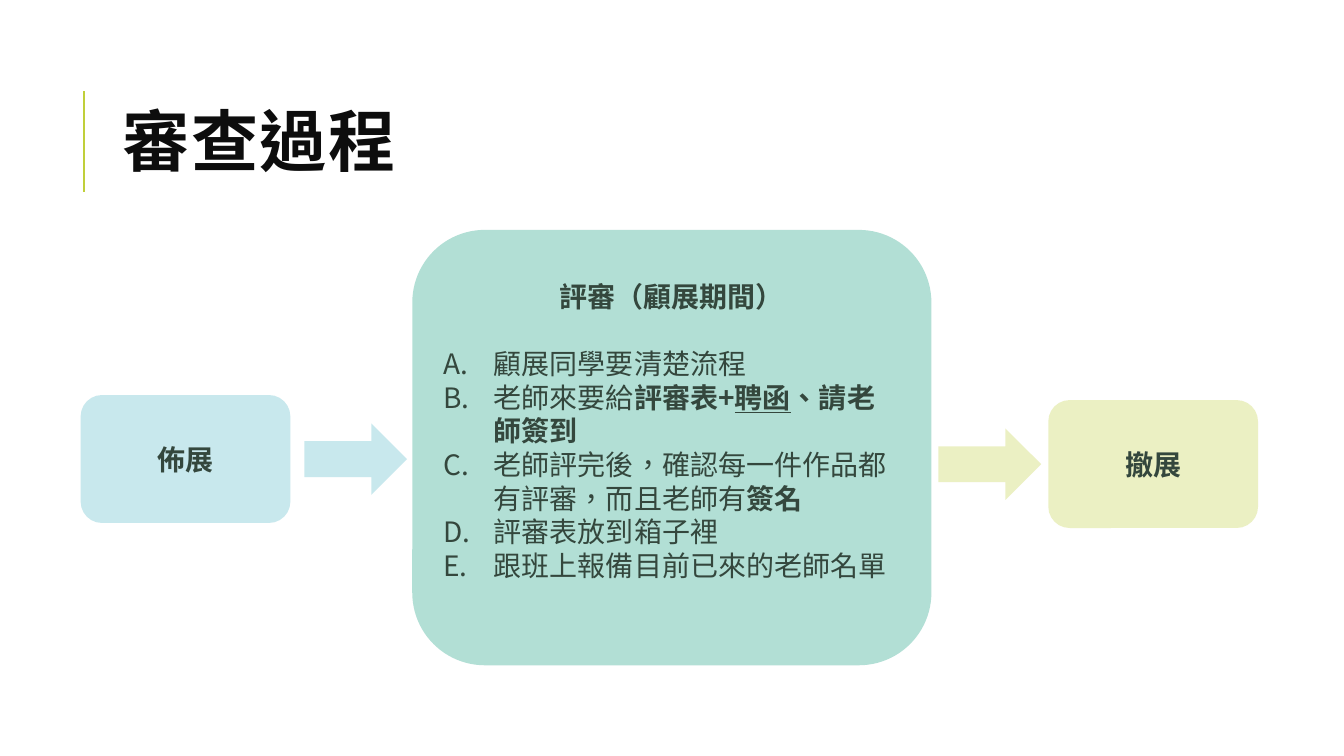
from lxml.etree import SubElement
from pptx import Presentation
from pptx.dml.color import RGBColor
from pptx.enum.shapes import MSO_CONNECTOR, MSO_SHAPE
from pptx.enum.text import MSO_ANCHOR, PP_ALIGN
from pptx.oxml.ns import qn
from pptx.util import Pt

SANS = "Noto Sans CJK SC"
INK = "34473D"
BLUE, TEAL, LIME = "4AB5C4", "029676", "C0CF3A"
SIZE = 20
LINE = 24

# Each step is a list of (text, bold, underline) runs.
STEPS = [
    [("顧展同學要清楚流程", False, False)],
    [("老師來要給", False, False), ("評審表+", True, False),
     ("聘函", True, True), ("、請老師簽到", True, False)],
    [("老師評完後，確認每一件作品都有評審，而且老師有", False, False),
     ("簽名", True, False)],
    [("評審表放到箱子裡", False, False)],
    [("跟班上報備目前已來的老師名單", False, False)],
]


def paint(color, code):
    color.rgb = RGBColor.from_string(code)


def add_run(para, text, size=SIZE, code=INK, bold=True, under=False, face=SANS):
    run = para.add_run()
    run.text = text
    font = run.font
    font.size, font.bold, font.name = Pt(size), bold, face
    if under:
        font.underline = True
    paint(font.color, code)
    props = font._element
    props.set("lang", "zh-TW")
    SubElement(props, qn("a:ea")).set("typeface", SANS)
    return run


def add_block(slide, kind, code, left, top, width, height):
    """Add a borderless shape filled at 30 % opacity."""
    block = slide.shapes.add_shape(kind, Pt(left), Pt(top), Pt(width), Pt(height))
    block.shadow.inherit = False
    block.line.fill.background()
    block.fill.solid()
    paint(block.fill.fore_color, code)
    tint = block.fill._xPr.find(".//" + qn("a:srgbClr"))
    SubElement(tint, qn("a:alpha")).set("val", "30000")
    return block


def add_card(slide, text, code, left, top, width=149.8, height=91.4):
    """Add a rounded box with a centred bold heading; return its text frame."""
    card = add_block(slide, MSO_SHAPE.ROUNDED_RECTANGLE, code,
                     left, top, width, height)
    frame = card.text_frame
    frame.word_wrap = True
    frame.vertical_anchor = MSO_ANCHOR.MIDDLE
    head = frame.paragraphs[0]
    head.alignment = PP_ALIGN.CENTER
    add_run(head, text)
    return frame


def add_arrow(slide, code, left, top):
    add_block(slide, MSO_SHAPE.RIGHT_ARROW, code, left, top, 73.4, 51.1)


def add_steps(frame, steps):
    """List the steps as A., B., C. with one line free above and below."""
    head = frame.paragraphs[0]
    head.line_spacing = Pt(LINE)
    head.space_after = Pt(LINE)
    frame.margin_bottom = Pt(3.6 + LINE)
    for step in steps:
        para = frame.add_paragraph()
        para.alignment = PP_ALIGN.LEFT
        para.line_spacing = Pt(LINE)
        props = para._p.get_or_add_pPr()
        props.set("marL", str(Pt(36)))
        props.set("indent", str(-Pt(36)))
        SubElement(props, qn("a:buFont")).set("typeface", SANS)
        SubElement(props, qn("a:buAutoNum")).set("type", "alphaUcPeriod")
        for text, bold, under in step:
            add_run(para, text, bold=bold, under=under)


def add_title(slide, text):
    box = slide.shapes.add_textbox(Pt(80.6), Pt(46.1), Pt(765.4), Pt(118.1))
    frame = box.text_frame
    frame.word_wrap = True
    frame.vertical_anchor = MSO_ANCHOR.MIDDLE
    para = frame.paragraphs[0]
    para.line_spacing = 0.8
    run = add_run(para, text, size=48, code="0D0D0D", face="Cabin")
    run.font._element.set("spc", "100")


def add_rule(slide, code, left, top, bottom):
    rule = slide.shapes.add_connector(MSO_CONNECTOR.STRAIGHT,
                                      Pt(left), Pt(bottom), Pt(left), Pt(top))
    paint(rule.line.color, code)
    rule.line.width = Pt(1.5)
    SubElement(rule._element.spPr, qn("a:effectLst"))


def main():
    deck = Presentation()
    deck.slide_width, deck.slide_height = Pt(960), Pt(540)
    slide = deck.slides.add_slide(deck.slide_layouts[6])

    add_rule(slide, LIME, 60, 65, 137)
    add_title(slide, "審查過程")
    add_card(slide, "佈展", BLUE, 57.6, 282.2)
    review = add_card(slide, "評審（顧展期間）", TEAL, 294.5, 164.2, 370.8, 311)
    add_steps(review, STEPS)
    add_arrow(slide, LIME, 670.3, 306)
    add_card(slide, "撤展", LIME, 748.8, 285.8)
    add_arrow(slide, BLUE, 217.4, 302.4)
    deck.save("out.pptx")


if __name__ == "__main__":
    main()
